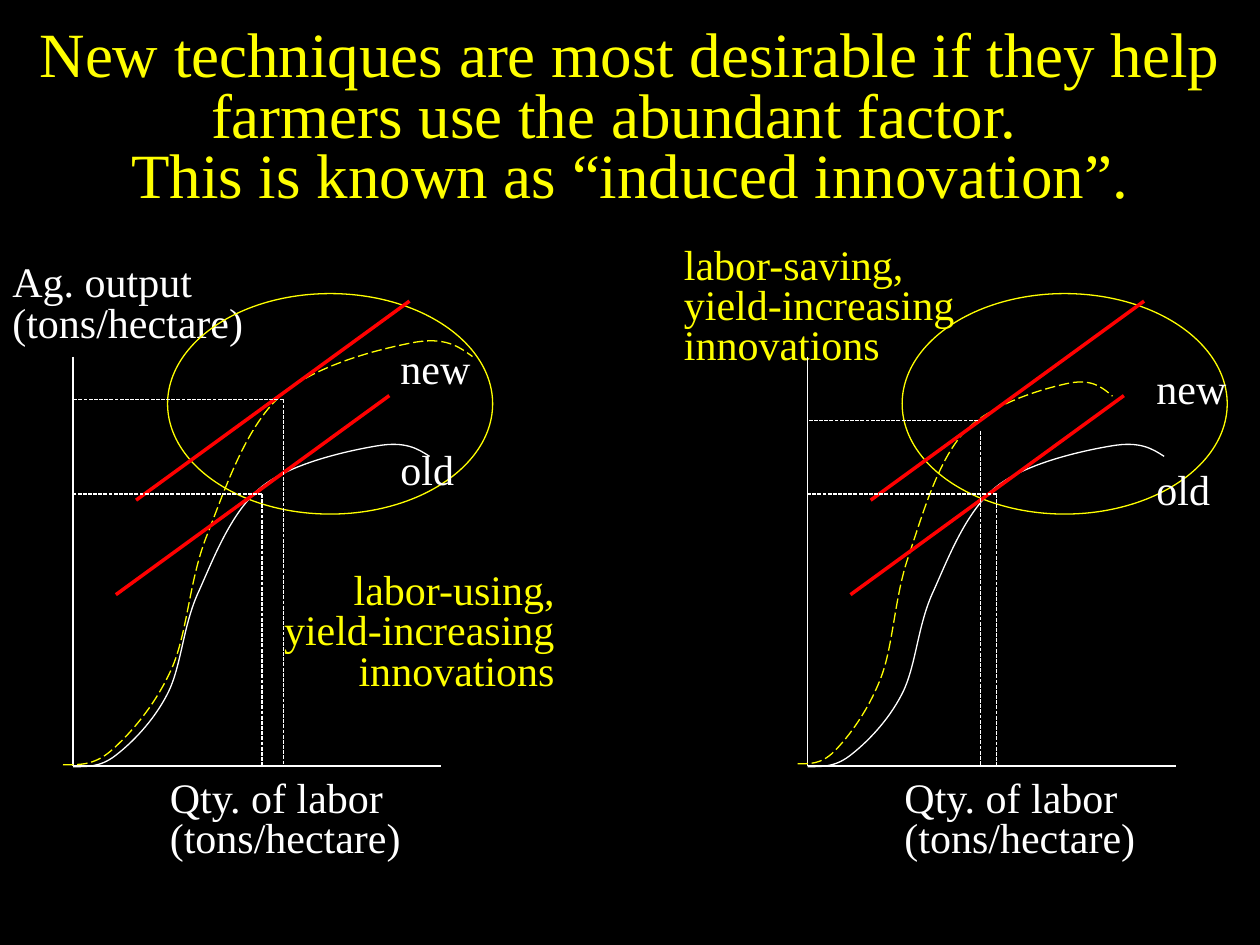
import pptx
import pptx.util
import pptx.dml.color
import pptx.enum.dml
import pptx.enum.shapes
import pptx.enum.text
import pptx.oxml.ns
from lxml import etree

Inches = pptx.util.Inches
Pt = pptx.util.Pt
qn = pptx.oxml.ns.qn
ALIGN = pptx.enum.text.PP_ALIGN
DASH = pptx.enum.dml.MSO_LINE
FIT = pptx.enum.text.MSO_AUTO_SIZE

COLORS = {"ground": "000000", "accent": "FFFF00", "plain": "FFFFFF", "slope": "FF0000"}
FONT = "Times New Roman"

# Production curve: percent of its box, start point and then cubic Bézier segments.
CURVE_START = (0, 99.4)
CURVE_SEGMENTS = [
    ((3.7, 99.4), (7.4, 99.7), (11.7, 96.2)),
    ((16.3, 92.4), (22.5, 85.7), (26.5, 77.2)),
    ((30.5, 68.7), (30.8, 56.1), (35.4, 45.6)),
    ((39.7, 35.1), (44.6, 21.3), (52.9, 14)),
    ((61.2, 6.7), (77.5, 2.9), (85.2, 1.5)),
    ((93.2, 0), (96.6, 2.3), (100, 4.7)),
]


def rgb(name):
    return pptx.dml.color.RGBColor.from_string(COLORS[name])


def style_line(shape, color, width=0.75, dash=None):
    shape.line.color.rgb = rgb(color)
    shape.line.width = Pt(width)
    if dash:
        shape.line.dash_style = dash


def add_line(shapes, start, end, color, width=0.75, dash=None):
    line = shapes.add_connector(pptx.enum.shapes.MSO_CONNECTOR.STRAIGHT,
                                *(Inches(v) for v in start + end))
    style_line(line, color, width, dash)
    etree.SubElement(line._element.spPr, qn("a:effectLst"))


def write_run(paragraph, text, size, color):
    run = paragraph.add_run()
    run.text = text
    run.font.name = FONT
    run.font.size = Pt(size)
    run.font.color.rgb = rgb(color)


def add_label(shapes, box, lines, color, wrap=True, align=ALIGN.LEFT, spacing=0.8, gap=0):
    """Add a text box with one paragraph per line, gap points apart."""
    label = shapes.add_textbox(*(Inches(v) for v in box))
    frame = label.text_frame
    frame.word_wrap = wrap
    frame.auto_size = FIT.SHAPE_TO_FIT_TEXT
    for index, text in enumerate(lines):
        paragraph = frame.add_paragraph() if index else frame.paragraphs[0]
        paragraph.alignment = align
        paragraph.line_spacing = spacing
        if index and gap:
            paragraph.space_before = Pt(gap)
        write_run(paragraph, text, 24, color)


def add_curve(shapes, box, color, dash=None):
    """Draw the production curve in box, its segments as true Bézier curves."""
    left, top, width, height = box

    def place(point):
        return (Inches(left + point[0] * width / 100), Inches(top + point[1] * height / 100))

    builder = shapes.build_freeform(*place(CURVE_START))
    builder.add_line_segments([place(segment[-1]) for segment in CURVE_SEGMENTS], close=False)
    curve = builder.convert_to_shape()
    straights = list(curve._element.iter(qn("a:lnTo")))
    for straight, segment in zip(straights, CURVE_SEGMENTS):
        bezier = etree.Element(qn("a:cubicBezTo"))
        for x, y in map(place, segment):
            etree.SubElement(bezier, qn("a:pt"), x=str(x - curve.left), y=str(y - curve.top))
        straight.getparent().replace(straight, bezier)
    curve.fill.background()
    curve.shadow.inherit = False
    style_line(curve, color, dash=dash)


def add_title(slide, box):
    title = slide.shapes.title
    title.left, title.top, title.width, title.height = (Inches(v) for v in box)
    frame = title.text_frame
    frame.word_wrap = True
    frame.auto_size = FIT.NONE
    frame.vertical_anchor = pptx.enum.text.MSO_ANCHOR.MIDDLE
    paragraph = frame.paragraphs[0]
    paragraph.alignment = ALIGN.CENTER
    paragraph.line_spacing = 0.8
    write_run(paragraph, "New techniques are most desirable if they help farmers "
              "use the abundant factor.  ", 36, "accent")
    paragraph.add_line_break()
    write_run(paragraph, "This is known as “induced innovation”.", 36, "accent")


def add_panel(slide, left, top, new_curve, new_labor, new_output, curve_names):
    """Draw one labor-response graph.

    new_curve is (top, width, height) of the new curve; new_labor and new_output
    are where its guides to the two axes begin; curve_names is the names' corner.
    """
    shapes = slide.shapes.add_group_shape().shapes
    axis, base = 0.08, 3.75

    def at(x, y):
        return (left + x, top + y)

    add_line(shapes, at(axis, 0.5), at(axis, base), "plain")
    add_line(shapes, at(axis, base), at(3, base), "plain")
    add_curve(shapes, at(axis, 1.17) + (2.83, 2.6), "plain")
    curve_top, width, height = new_curve
    add_curve(shapes, at(0, curve_top) + (width, height), "accent", DASH.LONG_DASH)
    add_label(shapes, at(0.75, 3.82) + (2.1, 0.75),
              ["Qty. of labor", "(tons/hectare)"], "plain", wrap=False)

    focus = shapes.add_shape(pptx.enum.shapes.MSO_SHAPE.OVAL,
                             *(Inches(v) for v in at(0.83, 0) + (2.58, 1.75)))
    focus.fill.background()
    focus.shadow.inherit = False
    style_line(focus, "accent")

    for x, y in [(0.42, 2.39), (0.58, 1.64)]:
        add_line(shapes, at(x, y), at(x + 2.17, y - 1.58), "slope", 2)

    old_optimum = (1.58, 1.59)
    for labor, output in [(old_optimum, old_optimum), (new_labor, new_output)]:
        add_line(shapes, at(*labor), at(labor[0], base), "plain", dash=DASH.SQUARE_DOT)
        add_line(shapes, at(*output), at(axis, output[1]), "plain", dash=DASH.SQUARE_DOT)

    add_label(slide.shapes, at(*curve_names) + (1.25, 1.31), ["new", "old"],
              "plain", spacing=1.0, gap=29)


def main():
    deck = pptx.Presentation()
    deck.slide_width, deck.slide_height = Inches(10), Inches(7.5)
    slide = deck.slides.add_slide(deck.slide_layouts[5])
    slide.background.fill.solid()
    slide.background.fill.fore_color.rgb = rgb("ground")

    add_title(slide, (0, 0.33, 10, 1.25))
    add_label(slide.shapes, (0, 2.06, 2.03, 0.74),
              ["Ag. output", "(tons/hectare)"], "plain", wrap=False)
    add_label(slide.shapes, (2, 4.5, 2.5, 1.07),
              ["labor-using, yield-increasing innovations"], "accent", align=ALIGN.RIGHT)
    add_label(slide.shapes, (5.33, 1.92, 3.17, 1.07),
              ["labor-saving,", "yield-increasing", "innovations"], "accent")

    add_panel(slide, 0.5, 2.33, new_curve=(0.34, 3.25, 3.42),
              new_labor=(1.75, 0.84), new_output=(1.75, 0.84), curve_names=(2.58, 0.34))
    add_panel(slide, 6.33, 2.33, new_curve=(0.67, 2.5, 3.08),
              new_labor=(1.45, 1.09), new_output=(1.43, 1.01), curve_names=(2.75, 0.5))
    deck.save("out.pptx")


if __name__ == "__main__":
    main()
